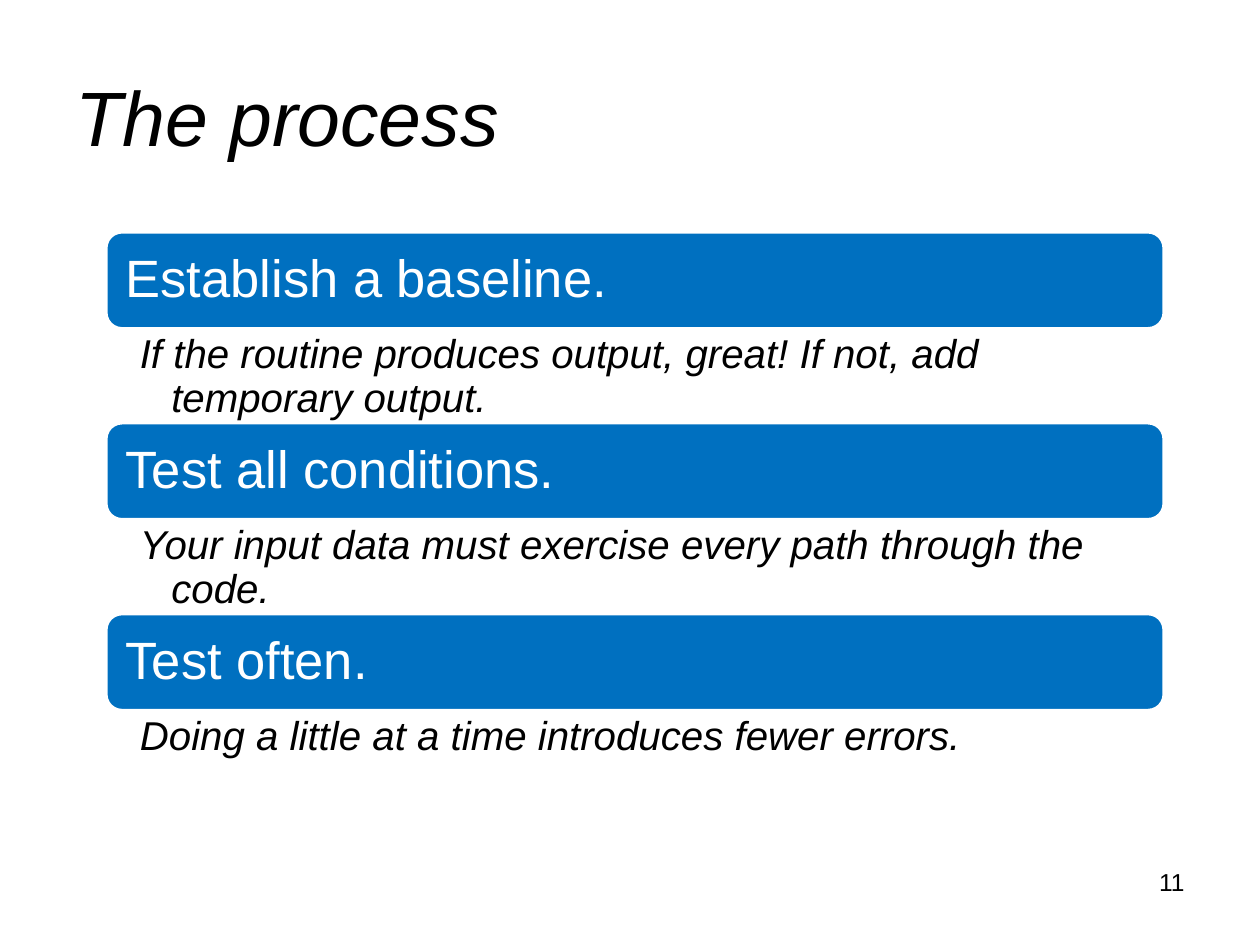
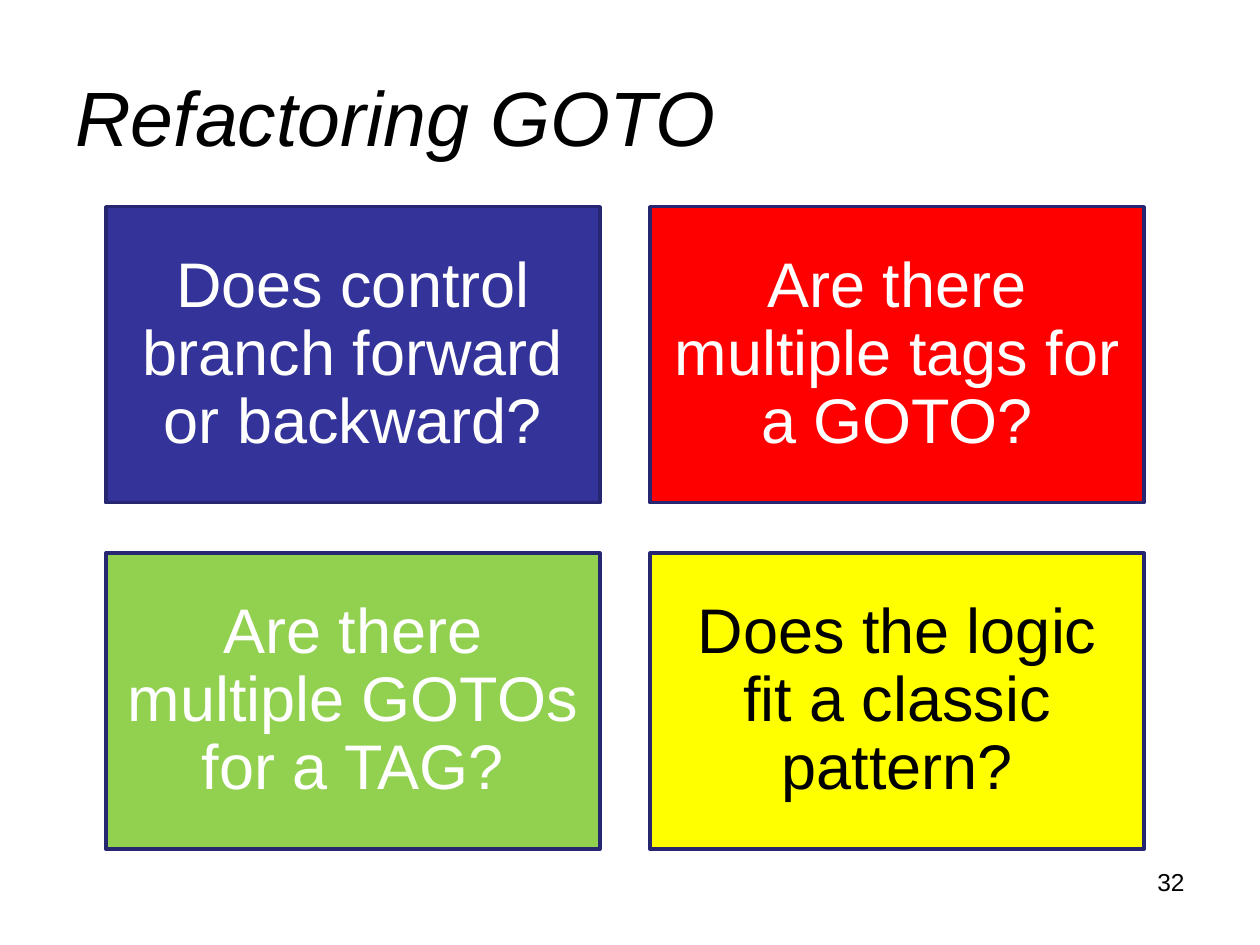
from dataclasses import dataclass

from pptx import Presentation
from pptx.dml.color import RGBColor
from pptx.enum.shapes import MSO_SHAPE as Shape
from pptx.enum.text import MSO_ANCHOR as Anchor, PP_ALIGN as Align
from pptx.shapes.autoshape import Shape as AutoShape
from pptx.slide import Slide
from pptx.util import Inches, Length, Pt

FONT = "Arial"
BLACK = RGBColor(0x00, 0x00, 0x00)
WHITE = RGBColor(0xFF, 0xFF, 0xFF)
BLUE = RGBColor(0x00, 0x70, 0xC0)
INDIGO = RGBColor(0x33, 0x33, 0x99)
DARK_INDIGO = RGBColor(0x26, 0x26, 0x71)
RED = RGBColor(0xFF, 0x00, 0x00)
GREEN = RGBColor(0x92, 0xD0, 0x50)
YELLOW = RGBColor(0xFF, 0xFF, 0x00)

CONTENT_LEFT = Inches(0.84)

STEP_WIDTH = Inches(8.4)
STEP_TOP = Inches(1.84)
STEP_PITCH = (Inches(4.87) - STEP_TOP) // 2
BAND_HEIGHT = Inches(0.77)
NOTE_INDENT = Inches(0.25)

CARD_TOP = Inches(1.64)
CARD_WIDTH = Inches(3.92)
CARD_HEIGHT = Inches(2.35)
CARD_GAP = Inches(0.4)
CARD_COLUMNS = 2


@dataclass(frozen=True)
class Box:
    left: Length
    top: Length
    width: Length
    height: Length

    @property
    def bounds(self) -> tuple[Length, Length, Length, Length]:
        return self.left, self.top, self.width, self.height


@dataclass(frozen=True)
class TextStyle:
    size: int
    color: RGBColor = BLACK
    italic: bool = False
    align: Align = Align.LEFT
    anchor: Anchor = Anchor.TOP
    inset_x: Length = Inches(0.1)
    inset_y: Length = Inches(0.05)
    line_spacing: float = 1.0


@dataclass(frozen=True)
class Step:
    heading: str
    note: str


@dataclass(frozen=True)
class Card:
    question: str
    fill: RGBColor
    text_color: RGBColor = WHITE


TITLE_BOX = Box(Inches(0.5), Inches(0.3), Inches(9), Inches(1.24))
TITLE_STYLE = TextStyle(44, italic=True, anchor=Anchor.MIDDLE)
NUMBER_BOX = Box(Inches(6.83), Inches(6.83), Inches(2.67), Inches(0.52))
NUMBER_STYLE = TextStyle(14, align=Align.RIGHT)
HEADING_STYLE = TextStyle(30, WHITE, anchor=Anchor.MIDDLE, inset_x=Inches(0.12),
                          inset_y=Inches(0.12), line_spacing=0.9)
NOTE_STYLE = TextStyle(23, italic=True, inset_x=Inches(0.27),
                       inset_y=Inches(0.04), line_spacing=0.9)

STEPS = [
    Step("Establish a baseline.",
         "If the routine produces output, great! If not, add temporary output."),
    Step("Test all conditions.",
         "Your input data must exercise every path through the code."),
    Step("Test often.", "Doing a little at a time introduces fewer errors."),
]

CARDS = [
    Card("Does control branch forward or backward?", INDIGO),
    Card("Are there multiple tags for a GOTO?", RED),
    Card("Are there multiple GOTOs for a TAG?", GREEN),
    Card("Does the logic fit a classic pattern?", YELLOW, BLACK),
]


def write(holder: AutoShape, text: str, style: TextStyle) -> None:
    frame = holder.text_frame
    frame.word_wrap = True
    frame.vertical_anchor = style.anchor
    frame.margin_left = frame.margin_right = style.inset_x
    frame.margin_top = frame.margin_bottom = style.inset_y
    paragraph = frame.paragraphs[0]
    paragraph.alignment = style.align
    paragraph.line_spacing = style.line_spacing
    run = paragraph.add_run()
    run.text = text
    run.font.name = FONT
    run.font.size = Pt(style.size)
    run.font.italic = style.italic
    run.font.color.rgb = style.color


def add_text(slide: Slide, box: Box, text: str, style: TextStyle) -> AutoShape:
    holder = slide.shapes.add_textbox(*box.bounds)
    write(holder, text, style)
    return holder


def add_panel(slide: Slide, kind: Shape, box: Box, fill: RGBColor,
              outline: RGBColor, text: str, style: TextStyle) -> None:
    panel = slide.shapes.add_shape(kind, *box.bounds)
    panel.shadow.inherit = False
    panel.fill.solid()
    panel.fill.fore_color.rgb = fill
    panel.line.color.rgb = outline
    panel.line.width = Pt(2)
    write(panel, text, style)


def add_titled_slide(deck: Presentation, title: str, number: int) -> Slide:
    slide = deck.slides.add_slide(deck.slide_layouts[6])
    add_text(slide, TITLE_BOX, title, TITLE_STYLE)
    add_text(slide, NUMBER_BOX, str(number), NUMBER_STYLE)
    return slide


def add_step(slide: Slide, step: Step, top: Length) -> None:
    band = Box(CONTENT_LEFT, top, STEP_WIDTH, BAND_HEIGHT)
    add_panel(slide, Shape.ROUNDED_RECTANGLE, band, BLUE, WHITE,
              step.heading, HEADING_STYLE)
    note_box = Box(CONTENT_LEFT, top + BAND_HEIGHT, STEP_WIDTH,
                   STEP_PITCH - BAND_HEIGHT)
    note = add_text(slide, note_box, step.note, NOTE_STYLE)
    # Hanging indent: wrapped lines start further right than the first one.
    properties = note.text_frame.paragraphs[0]._p.get_or_add_pPr()
    properties.set("marL", str(NOTE_INDENT))
    properties.set("indent", str(-NOTE_INDENT))


def add_card(slide: Slide, card: Card, row: int, column: int) -> None:
    box = Box(CONTENT_LEFT + column * (CARD_WIDTH + CARD_GAP),
              CARD_TOP + row * (CARD_HEIGHT + CARD_GAP),
              CARD_WIDTH, CARD_HEIGHT)
    style = TextStyle(36, card.text_color, align=Align.CENTER,
                      anchor=Anchor.MIDDLE, inset_x=Inches(0.15),
                      inset_y=Inches(0.15), line_spacing=0.9)
    add_panel(slide, Shape.RECTANGLE, box, card.fill, DARK_INDIGO,
              card.question, style)


def main() -> None:
    deck = Presentation()
    deck.slide_width = Inches(10)
    deck.slide_height = Inches(7.5)

    process = add_titled_slide(deck, "The process", 11)
    for index, step in enumerate(STEPS):
        add_step(process, step, STEP_TOP + index * STEP_PITCH)

    refactoring = add_titled_slide(deck, "Refactoring GOTO", 32)
    for index, card in enumerate(CARDS):
        add_card(refactoring, card, *divmod(index, CARD_COLUMNS))

    deck.save("out.pptx")


if __name__ == "__main__":
    main()
